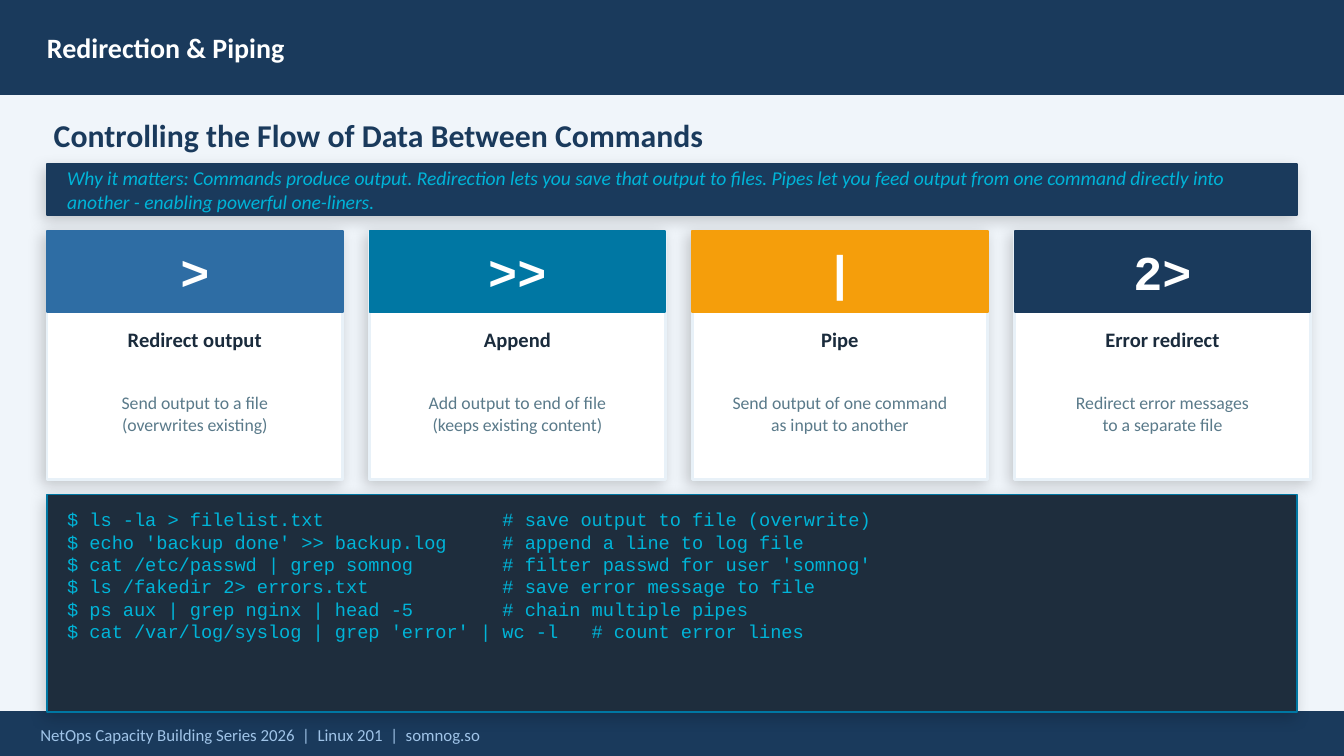
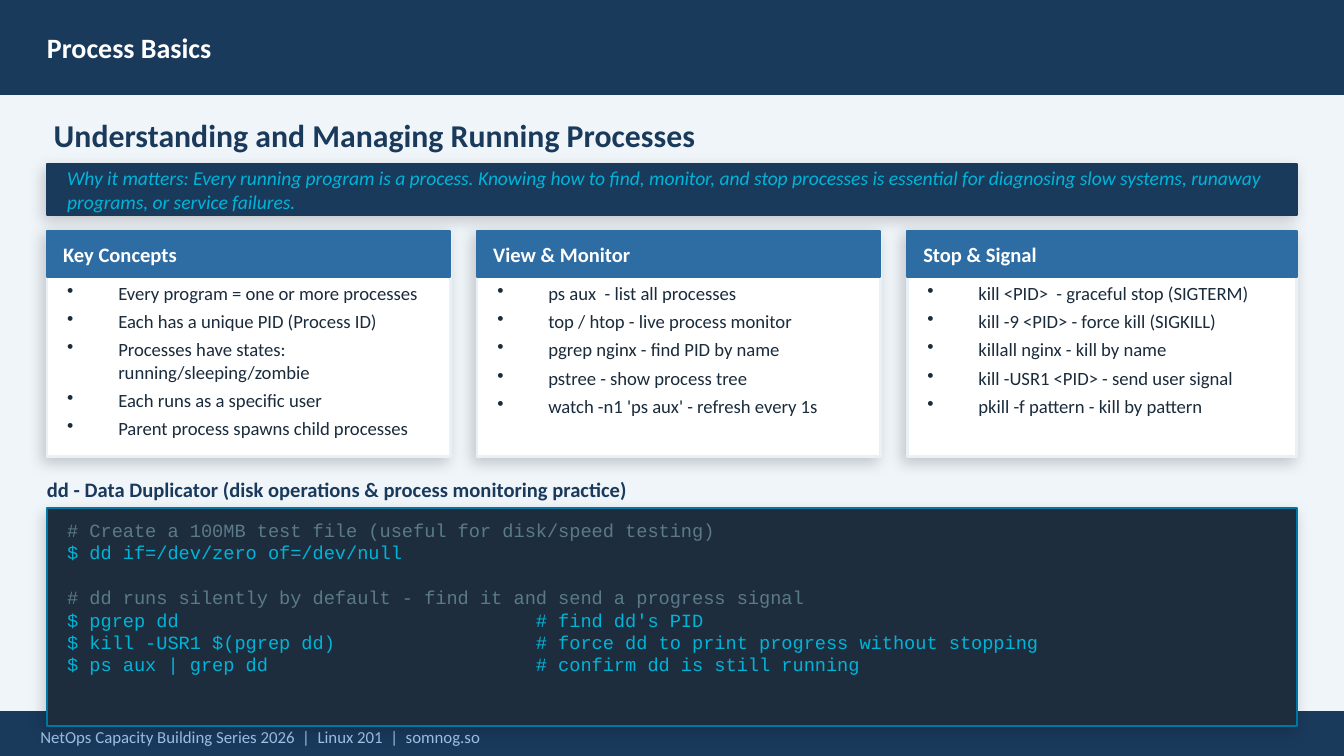
from dataclasses import dataclass

from lxml import etree
from pptx import Presentation
from pptx.dml.color import RGBColor
from pptx.enum.shapes import MSO_SHAPE
from pptx.enum.text import MSO_ANCHOR, PP_ALIGN
from pptx.oxml.ns import qn
from pptx.slide import Slide
from pptx.util import Inches, Pt

RECTANGLE = MSO_SHAPE.RECTANGLE
TOP, MIDDLE = MSO_ANCHOR.TOP, MSO_ANCHOR.MIDDLE
LEFT, CENTER = PP_ALIGN.LEFT, PP_ALIGN.CENTER

NAVY = RGBColor(0x1A, 0x3A, 0x5C)
BLUE = RGBColor(0x2E, 0x6D, 0xA4)
TEAL = RGBColor(0x00, 0x77, 0xA3)
CYAN = RGBColor(0x00, 0xB4, 0xD8)
AMBER = RGBColor(0xF5, 0x9E, 0x0B)
WHITE = RGBColor(0xFF, 0xFF, 0xFF)
PALE = RGBColor(0xF0, 0xF5, 0xFA)
CARD_EDGE = RGBColor(0xE8, 0xF1, 0xF8)
FOOTER_BLUE = RGBColor(0xA0, 0xC4, 0xE8)
INK = RGBColor(0x1A, 0x2B, 0x3C)
GREY = RGBColor(0x5A, 0x7A, 0x8A)
TERMINAL = RGBColor(0x1E, 0x2D, 0x3D)
BLACK = RGBColor(0x00, 0x00, 0x00)

BODY_FONT, CODE_FONT = "Calibri", "Courier New"
SLIDE_W = 10
SLIDE_H = SLIDE_W * 9 / 16
MARGIN = 0.35
CONTENT_W = 9.3
CARD_TOP = 1.72
GUTTER = 0.2
BULLET_INDENT = 0.38
CODE_LINE = Pt(12)
FOOTER = "NetOps Capacity Building Series 2026  |  Linux 201  |  somnog.so"


@dataclass(frozen=True)
class Box:
    """A rectangle on the slide, in inches."""
    left: float
    top: float
    width: float
    height: float


@dataclass(frozen=True)
class TextStyle:
    """The look of one block of text."""
    size: float
    color: RGBColor
    font: str = BODY_FONT
    bold: bool = False
    italic: bool = False
    align: PP_ALIGN = LEFT
    anchor: MSO_ANCHOR = MIDDLE


@dataclass(frozen=True)
class Operator:
    """A shell operator and what it does."""
    symbol: str
    color: RGBColor
    name: str
    effect: tuple[str, ...]


@dataclass(frozen=True)
class Topic:
    """A headed list of points."""
    heading: str
    points: tuple[str, ...]


@dataclass(frozen=True)
class Lesson:
    """The wording that frames one slide."""
    title: str
    headline: str
    reason: str
    footer_top: float


TITLE = TextStyle(15, WHITE, bold=True)
FOOTNOTE = TextStyle(9, FOOTER_BLUE)
HEADLINE = TextStyle(17, NAVY, bold=True)
REASON = TextStyle(10.5, CYAN, italic=True)
SYMBOL = TextStyle(26, WHITE, CODE_FONT, bold=True, align=CENTER)
OPERATOR_NAME = TextStyle(11, INK, bold=True, align=CENTER)
EFFECT = TextStyle(9.5, GREY, align=CENTER)
TOPIC_HEADING = TextStyle(11, WHITE, bold=True)
POINT = TextStyle(10, INK, anchor=TOP)
SECTION = TextStyle(11, NAVY, bold=True)
CODE = TextStyle(10, CYAN, CODE_FONT, anchor=TOP)

REDIRECTION = Lesson(
    "Redirection & Piping",
    "Controlling the Flow of Data Between Commands",
    "Why it matters: Commands produce output. Redirection lets you save that output "
    "to files. Pipes let you feed output from one command directly into another - "
    "enabling powerful one-liners.",
    5.3,
)
PROCESSES = Lesson(
    "Process Basics",
    "Understanding and Managing Running Processes",
    "Why it matters: Every running program is a process. Knowing how to find, monitor, "
    "and stop processes is essential for diagnosing slow systems, runaway programs, "
    "or service failures.",
    5.32,
)
OPERATORS = (
    Operator(">", BLUE, "Redirect output",
             ("Send output to a file", "(overwrites existing)")),
    Operator(">>", TEAL, "Append",
             ("Add output to end of file", "(keeps existing content)")),
    Operator("|", AMBER, "Pipe",
             ("Send output of one command", "as input to another")),
    Operator("2>", NAVY, "Error redirect",
             ("Redirect error messages", "to a separate file")),
)
TOPICS = (
    Topic("Key Concepts", (
        "Every program = one or more processes",
        "Each has a unique PID (Process ID)",
        "Processes have states: running/sleeping/zombie",
        "Each runs as a specific user",
        "Parent process spawns child processes",
    )),
    Topic("View & Monitor", (
        "ps aux  - list all processes",
        "top / htop - live process monitor",
        "pgrep nginx - find PID by name",
        "pstree - show process tree",
        "watch -n1 'ps aux' - refresh every 1s",
    )),
    Topic("Stop & Signal", (
        "kill <PID>  - graceful stop (SIGTERM)",
        "kill -9 <PID> - force kill (SIGKILL)",
        "killall nginx - kill by name",
        "kill -USR1 <PID> - send user signal",
        "pkill -f pattern - kill by pattern",
    )),
)
REDIRECTION_CODE = (
    "$ ls -la > filelist.txt                # save output to file (overwrite)",
    "$ echo 'backup done' >> backup.log     # append a line to log file",
    "$ cat /etc/passwd | grep somnog        # filter passwd for user 'somnog'",
    "$ ls /fakedir 2> errors.txt            # save error message to file",
    "$ ps aux | grep nginx | head -5        # chain multiple pipes",
    "$ cat /var/log/syslog | grep 'error' | wc -l   # count error lines",
)
DD_CODE = (
    "# Create a 100MB test file (useful for disk/speed testing)",
    "$ dd if=/dev/zero of=/dev/null",
    "# dd runs silently by default - find it and send a progress signal",
    "$ pgrep dd                                # find dd's PID",
    "$ kill -USR1 $(pgrep dd)                  # force dd to print progress without stopping",
    "$ ps aux | grep dd                        # confirm dd is still running",
)


def inches(box: Box) -> tuple[Inches, ...]:
    """Return the box as lengths for python-pptx."""
    return tuple(Inches(v) for v in (box.left, box.top, box.width, box.height))


def add_panel(slide: Slide, box: Box, fill: RGBColor, edge: RGBColor | None = None,
              edge_width: float = 1, raised: bool = False) -> None:
    """Draw a filled rectangle, with a soft shadow if raised."""
    panel = slide.shapes.add_shape(RECTANGLE, *inches(box))
    panel.fill.solid()
    panel.fill.fore_color.rgb = fill
    panel.line.color.rgb = edge or fill
    panel.line.width = Pt(edge_width)
    panel.shadow.inherit = False
    if raised:
        effects = panel.element.spPr.find(qn("a:effectLst"))
        shadow = etree.SubElement(
            effects, qn("a:outerShdw"), blurRad=str(Pt(8)), dist=str(Pt(3)),
            dir=str(135 * 60000), algn="bl", rotWithShape="0")
        tint = etree.SubElement(shadow, qn("a:srgbClr"), val=str(BLACK))
        etree.SubElement(tint, qn("a:alpha"), val="18000")


def add_text(slide: Slide, box: Box, lines: tuple[str, ...], style: TextStyle,
             bulleted: bool = False) -> list:
    """Write one paragraph per line and return the paragraphs."""
    frame = slide.shapes.add_textbox(*inches(box)).text_frame
    frame.word_wrap = True
    frame.vertical_anchor = style.anchor
    frame.margin_left = frame.margin_right = frame.margin_top = frame.margin_bottom = 0
    frame.text = "\n".join(lines)
    for paragraph in frame.paragraphs:
        paragraph.alignment = style.align
        if bulleted:
            properties = paragraph._p.get_or_add_pPr()
            properties.set("marL", str(Inches(BULLET_INDENT)))
            properties.set("indent", str(-Inches(BULLET_INDENT)))
            etree.SubElement(properties, qn("a:buSzPct"), val="100000")
            etree.SubElement(properties, qn("a:buChar"), char="•")
            paragraph.space_after = Pt(3)
            paragraph.font.size = Pt(style.size)
        for run in paragraph.runs:
            run.font.name = style.font
            run.font.size = Pt(style.size)
            run.font.bold = style.bold
            run.font.italic = style.italic
            run.font.color.rgb = style.color
    return list(frame.paragraphs)


def add_lesson(deck: Presentation, lesson: Lesson) -> Slide:
    """Add a slide with its title band, footer, headline and reason."""
    slide = deck.slides.add_slide(deck.slide_layouts[6])
    slide.background.fill.solid()
    slide.background.fill.fore_color.rgb = PALE
    add_panel(slide, Box(0, 0, SLIDE_W, 0.7), NAVY)
    add_text(slide, Box(MARGIN, 0, 7.5, 0.7), (lesson.title,), TITLE)
    add_panel(slide, Box(0, 5.3, SLIDE_W, 0.33), NAVY)
    add_text(slide, Box(0.3, lesson.footer_top, 8.5, 0.33), (FOOTER,), FOOTNOTE)
    add_text(slide, Box(0.4, 0.82, 9.2, 0.36), (lesson.headline,), HEADLINE)
    add_panel(slide, Box(MARGIN, 1.22, CONTENT_W, 0.38), NAVY, raised=True)
    add_text(slide, Box(0.5, 1.22, 9, 0.38), (lesson.reason,), REASON)
    return slide


def add_card(slide: Slide, box: Box, header_height: float, color: RGBColor) -> None:
    """Draw a white card with a coloured header."""
    add_panel(slide, box, WHITE, CARD_EDGE, 1.5, raised=True)
    add_panel(slide, Box(box.left, box.top, box.width, header_height), color)


def add_operator(slide: Slide, left: float, width: float, operator: Operator) -> None:
    """Draw the card of one shell operator."""
    add_card(slide, Box(left, CARD_TOP, width, 1.85), 0.6, operator.color)
    add_text(slide, Box(left, CARD_TOP, width, 0.6), (operator.symbol,), SYMBOL)
    inner_left, inner_width = left + 0.1, width - 0.2
    add_text(slide, Box(inner_left, 2.35, inner_width, 0.35), (operator.name,), OPERATOR_NAME)
    add_text(slide, Box(inner_left, 2.7, inner_width, 0.75), operator.effect, EFFECT)


def add_topic(slide: Slide, left: float, width: float, topic: Topic) -> None:
    """Draw the card of one topic."""
    add_card(slide, Box(left, CARD_TOP, width, 1.68), 0.34, BLUE)
    add_text(slide, Box(left + 0.12, CARD_TOP, width - 0.2, 0.34),
             (topic.heading,), TOPIC_HEADING)
    add_text(slide, Box(left + 0.15, 2.1, width - 0.28, 1.18), topic.points, POINT,
             bulleted=True)


def add_terminal(slide: Slide, top: float, text_top: float, code: tuple[str, ...]) -> None:
    """Draw a terminal, with comment lines in grey and a gap before later ones."""
    add_panel(slide, Box(MARGIN, top, CONTENT_W, 1.62), TERMINAL, TEAL, raised=True)
    paragraphs = add_text(slide, Box(0.5, text_top, 9, 1.42), code, CODE)
    for index, paragraph in enumerate(paragraphs):
        if paragraph.text.startswith("#"):
            paragraph.runs[0].font.color.rgb = GREY
            if index:
                paragraph.space_before = CODE_LINE


def build_redirection(deck: Presentation) -> None:
    """Build the slide on redirection and pipes."""
    slide = add_lesson(deck, REDIRECTION)
    width = 2.2
    for index, operator in enumerate(OPERATORS):
        add_operator(slide, MARGIN + index * (width + GUTTER), width, operator)
    add_terminal(slide, 3.68, 3.78, REDIRECTION_CODE)


def build_processes(deck: Presentation) -> None:
    """Build the slide on processes."""
    slide = add_lesson(deck, PROCESSES)
    width = 3
    for index, topic in enumerate(TOPICS):
        left = MARGIN + index * (width + GUTTER)
        add_topic(slide, left, min(width, MARGIN + CONTENT_W - left), topic)
    add_text(slide, Box(MARGIN, 3.48, CONTENT_W, 0.32),
             ("dd - Data Duplicator (disk operations & process monitoring practice)",), SECTION)
    add_terminal(slide, 3.78, 3.86, DD_CODE)


def main() -> None:
    """Build and save the deck."""
    deck = Presentation()
    deck.slide_width, deck.slide_height = Inches(SLIDE_W), Inches(SLIDE_H)
    build_redirection(deck)
    build_processes(deck)
    deck.save("out.pptx")


if __name__ == "__main__":
    main()
